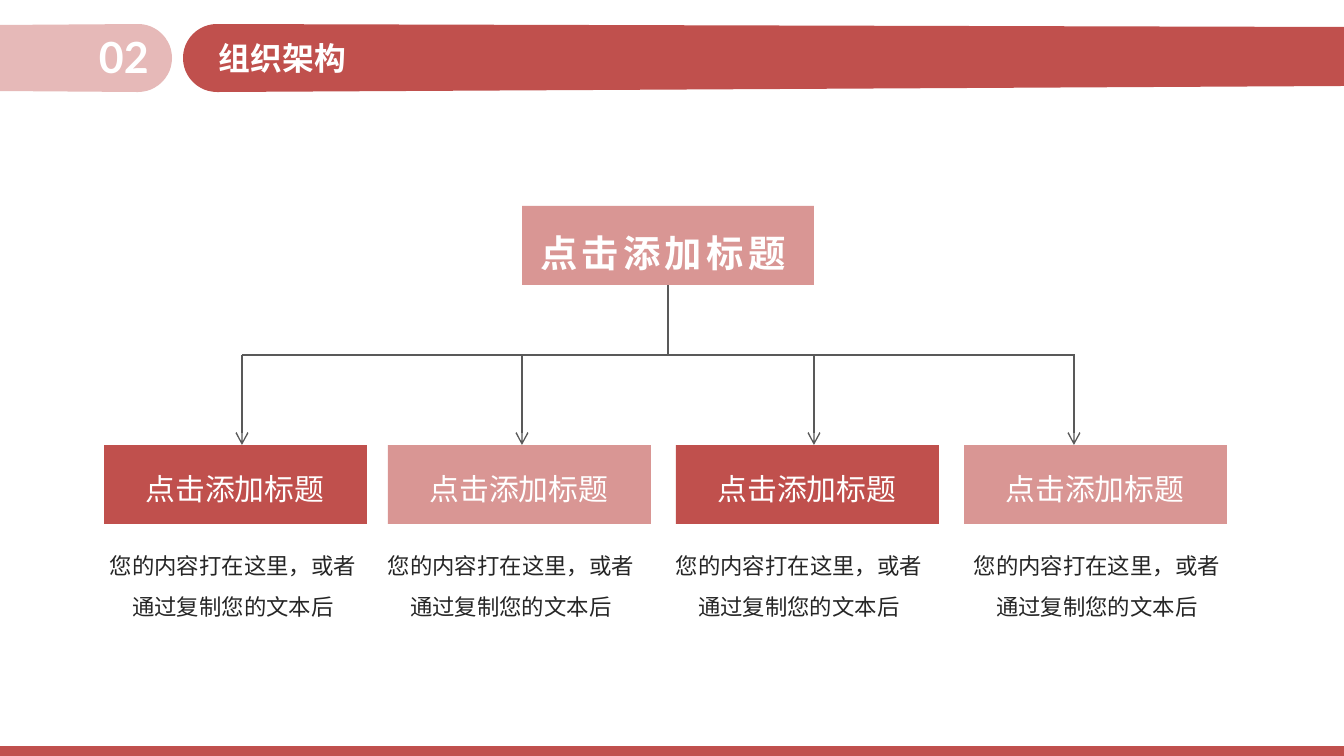
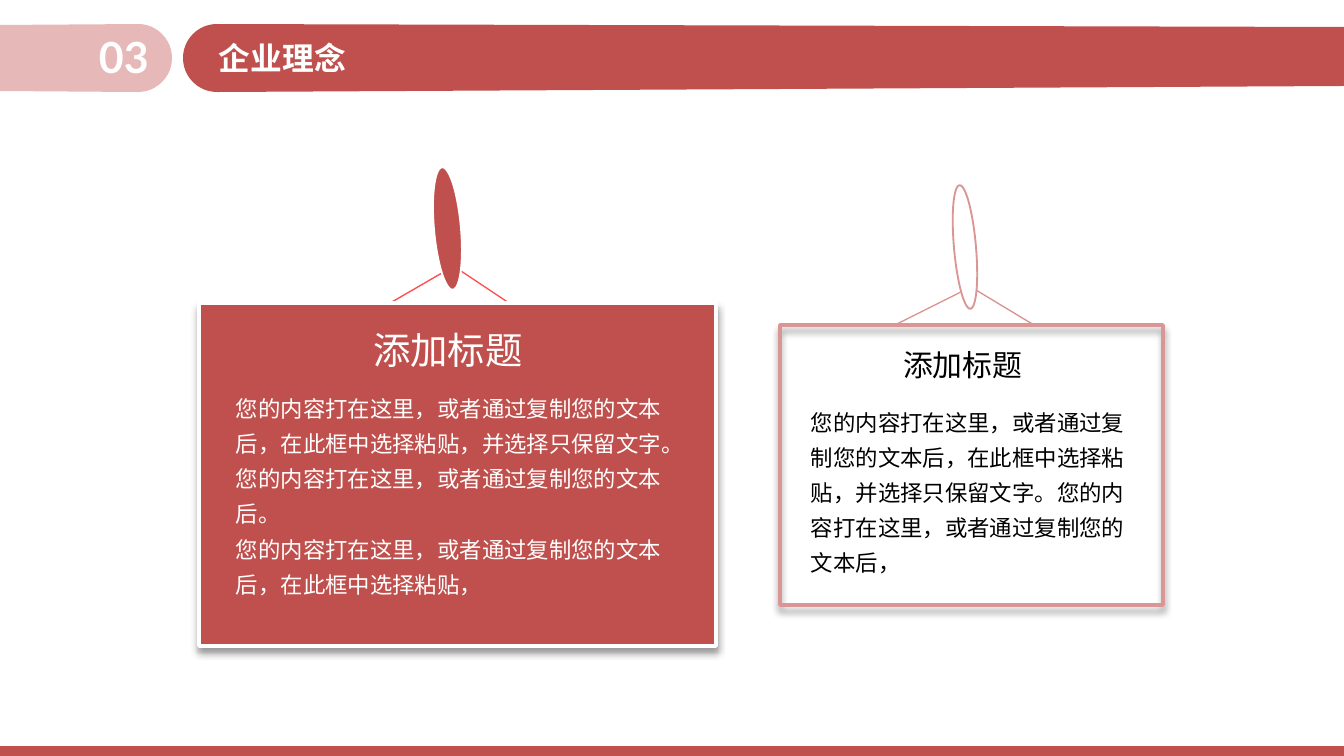
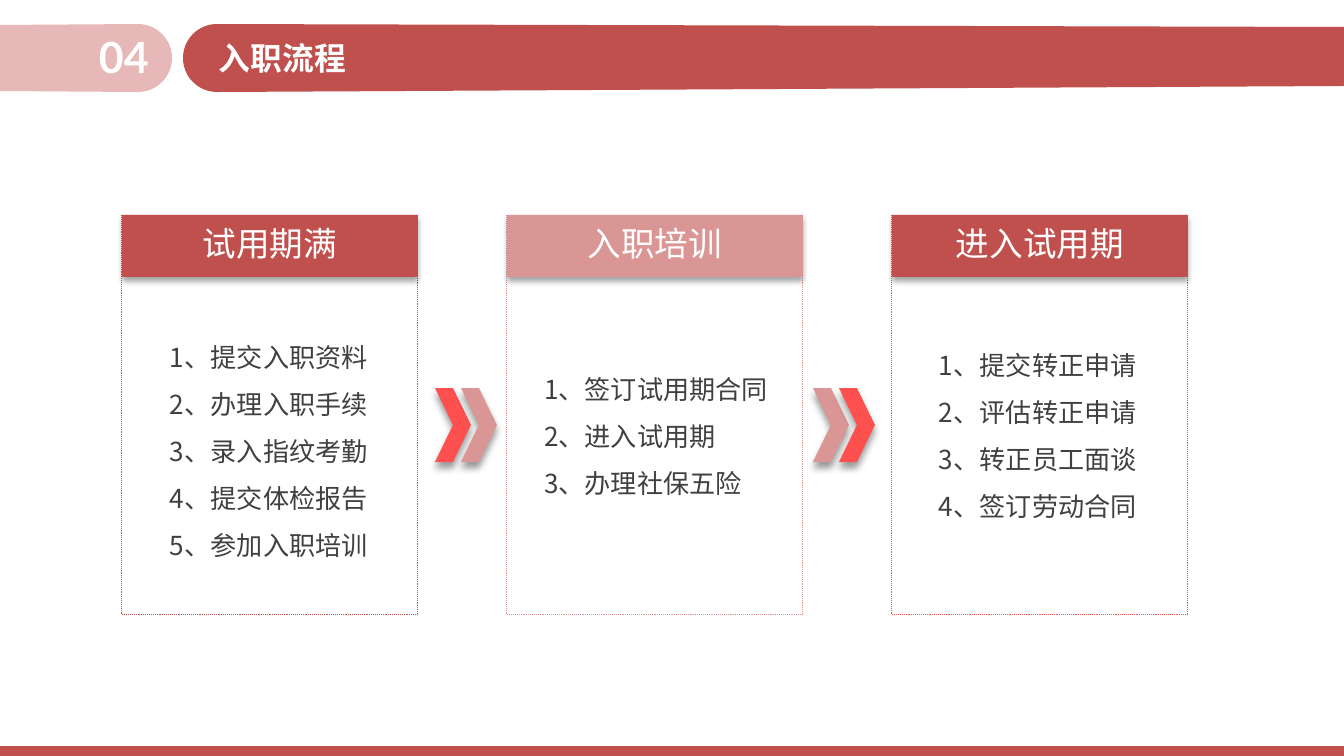
import math
from lxml import etree
from pptx import Presentation
from pptx.dml.color import RGBColor
from pptx.enum import dml, shapes, text
from pptx.oxml.ns import qn
from pptx import util as u

PX = 6804  # EMU per px
RED = RGBColor(0xC0, 0x50, 0x4D)
ROSE = RGBColor(0xD9, 0x96, 0x94)
PALE = RGBColor(0xE6, 0xB9, 0xB8)
HOT = RGBColor(0xFF, 0x50, 0x50)
GREY = RGBColor(0x59, 0x59, 0x59)
INK = RGBColor(0x26, 0x26, 0x26)
SLATE = RGBColor(0x40, 0x40, 0x40)
BLACK = RGBColor(0, 0, 0)
WHITE = RGBColor(0xFF, 0xFF, 0xFF)
SANS = "Noto Sans CJK SC"
LEFT, MID = text.PP_ALIGN.LEFT, text.PP_ALIGN.CENTER
TOP, CENTRE = text.MSO_ANCHOR.TOP, text.MSO_ANCHOR.MIDDLE
KIND = shapes.MSO_SHAPE
SOFT = (35, 3.1, 1.8)
DEEP = (40, 4, 3)


def draw(slide, kind, box, fill=None, line=None, width=1, shade=None):
    """Add a preset shape; shade is (opacity %, blur pt, distance pt)."""
    shape = slide.shapes.add_shape(kind, *[v * PX for v in box])
    shape.shadow.inherit = False
    if fill is None:
        shape.fill.background()
    else:
        shape.fill.solid()
        shape.fill.fore_color.rgb = fill
    if line is None:
        shape.line.fill.background()
    else:
        shape.line.color.rgb = line
        shape.line.width = u.Pt(width)
    if shade:
        alpha, blur, dist = shade
        cast = etree.SubElement(
            shape.element.spPr.find(qn("a:effectLst")), qn("a:outerShdw"),
            blurRad=str(u.Pt(blur)), dist=str(u.Pt(dist)), dir="5400000",
            algn="t", rotWithShape="0")
        tint = etree.SubElement(cast, qn("a:srgbClr"), val="000000")
        etree.SubElement(tint, qn("a:alpha"), val=str(alpha * 1000))
    return shape


def write(shape, lines, size, color, box=None, font=SANS, bold=False, align=LEFT,
          space=1.0, wrap=True, pad=(13, 7), anchor=TOP, track=0):
    """Fill a shape, placeholder or text box (moved to box) with paragraphs."""
    if box:
        shape.left, shape.top, shape.width, shape.height = [v * PX for v in box]
    frame = shape.text_frame
    frame.word_wrap = wrap
    frame.auto_size = text.MSO_AUTO_SIZE.NONE
    frame.vertical_anchor = anchor
    frame.margin_left = frame.margin_right = pad[0] * PX
    frame.margin_top = frame.margin_bottom = pad[1] * PX
    for i, line in enumerate(lines):
        para = frame.add_paragraph() if i else frame.paragraphs[0]
        if shape.is_placeholder:
            props = para._p.get_or_add_pPr()
            props.set("marL", "0")
            props.set("indent", "0")
            etree.SubElement(props, qn("a:buNone"))
        para.alignment = align
        para.line_spacing = space
        para.space_before = u.Pt(0)
        run = para.add_run()
        run.text = line
        run.font.size = u.Pt(size)
        run.font.bold = bold
        run.font.name = font
        run.font.color.rgb = color
        props = run._r.get_or_add_rPr()
        if track:
            props.set("spc", str(track))
        east = etree.Element(qn("a:ea"), typeface=SANS)
        props.find(qn("a:latin")).addnext(east)


deck = Presentation()
deck.slide_width, deck.slide_height = 1344 * PX, 756 * PX

# Slides with number and title
heads = [("02", "组织架构", 5), ("03", "企业理念", 5), ("04", "入职流程", 4)]
for num, name, look in heads:
    slide = deck.slides.add_slide(deck.slide_layouts[look])
    write(slide.shapes.title, [name], 17, WHITE, (206, 32, 156, 53),
          font="Lato", bold=True, wrap=False)
    write(slide.shapes.add_textbox(0, 0, 0, 0), [num], 23, WHITE,
          (86, 24, 78, 66), font="Lato", bold=True, wrap=False)
chart, creed, flow = deck.slides

# Bands, kept on the master
bands = [draw(chart, KIND.RECTANGLE, (0, 746, 1347, 12), RED)]
for mid, turn, ends, fill in [
        (138, -90, [(0, 91), (0, 25)], PALE),
        (217, 90, [(1344, 27), (1344, 86)], RED)]:
    arc = [math.radians(turn + 7.5 * i) for i in range(25)]
    pts = [(mid + 34 * math.cos(a), 58 + 34 * math.sin(a)) for a in arc] + ends
    pts = [(x * PX, y * PX) for x, y in pts]
    path = chart.shapes.build_freeform(*pts[0])
    path.add_line_segments(pts[1:], close=True)
    band = path.convert_to_shape()
    band.shadow.inherit = False
    band.fill.solid()
    band.fill.fore_color.rgb = fill
    band.line.fill.background()
    bands.append(band)
for band in bands:
    deck.slide_master.shapes.element.append(band.element)

# Ropes of the signs and lines of the tree, the trunk last
wires = [(creed, (366, 317, 442, 273), HOT, False),
         (creed, (461, 271, 530, 317), HOT, False),
         (creed, (895, 325, 961, 292), ROSE, False),
         (creed, (976, 290, 1034, 325), ROSE, False),
         (chart, (242, 355, 1075, 355), GREY, False)]
wires += [(chart, (x, 355, x, 445), GREY, True) for x in (242, 522, 814, 1074)]
wires.append((chart, (668, 285, 668, 355), GREY, False))
for slide, ends, color, arrow in wires:
    wire = slide.shapes.add_connector(
        shapes.MSO_CONNECTOR.STRAIGHT, *[v * PX for v in ends])
    wire.line.color.rgb = color
    wire.line.width = u.Pt(0.75)
    props = wire.element.spPr
    if arrow:
        etree.SubElement(props.find(qn("a:ln")), qn("a:tailEnd"), type="arrow")
    etree.SubElement(props, qn("a:effectLst"))

# Slide 1: tree
root = draw(chart, KIND.RECTANGLE, (522, 206, 292, 79), ROSE)
wire.begin_connect(root, 2)
write(chart.shapes.add_textbox(0, 0, 0, 0), ["点击添加标题"], 20, WHITE,
      (524, 223, 278, 59), bold=True, align=MID, wrap=False, track=220)
for x, note, fill in [(104, 94, RED), (388, 372, ROSE),
                      (676, 660, RED), (964, 958, ROSE)]:
    draw(chart, KIND.RECTANGLE, (x, 445, 263, 79), fill)
    write(chart.shapes.add_textbox(0, 0, 0, 0), ["点击添加标题"], 16, WHITE,
          (x + 27, 464, 208, 50), align=MID, wrap=False)
    write(chart.shapes.add_textbox(0, 0, 0, 0),
          ["您的内容打在这里，或者通过复制您的文本后"], 12, INK,
          (note, 532, 278, 95), align=MID, space=1.5)

# Slide 2: hanging signs
base = "您的内容打在这里，或者通过复制您的文本后，在此框中选择粘贴，"
long = base + "并选择只保留文字。您的内容打在这里，或者通过复制您的文本后"
signs = [
    ((434, 167, 27, 123), (199, 303, 517, 343), RED, WHITE, WHITE,
     20, (360, 320, 177, 59),
     [(long + "。", (227, 382, 458, 152)), (base, (227, 523, 458, 81))]),
    ((954, 185, 22, 124), (780, 325, 383, 280), None, ROSE, BLACK,
     16, (890, 340, 148, 50), [(long + "，", (802, 396, 339, 187))])]
for peg, card, fill, edge, ink, size, spot, notes in signs:
    draw(creed, KIND.OVAL, peg, fill, edge).rotation = -5
    draw(creed, KIND.RECTANGLE, card, fill, edge, 2, DEEP)
    write(creed.shapes.add_textbox(0, 0, 0, 0), ["添加标题"], size, ink, spot,
          wrap=False)
    for note, box in notes:
        write(creed.shapes.add_textbox(0, 0, 0, 0), [note], 12, ink, box,
              space=1.3, pad=(9, 5))

# Slide 3: steps
steps = [
    ("试用期满", RED, RED, (157, 319, 241, 251),
     ["提交入职资料", "办理入职手续", "录入指纹考勤", "提交体检报告", "参加入职培训"]),
    ("入职培训", ROSE, ROSE, (531, 351, 296, 156),
     ["签订试用期合同", "进入试用期", "办理社保五险"]),
    ("进入试用期", RED, HOT, (926, 327, 289, 203),
     ["提交转正申请", "评估转正申请", "转正员工面谈", "签订劳动合同"])]
*lists, spare = list(flow.placeholders)[1:]
spare.element.getparent().remove(spare.element)
for i, (name, fill, edge, box, items) in enumerate(steps):
    x = 122 + 385 * i
    frame = draw(flow, KIND.RECTANGLE, (x, 215, 296, 400), None, edge, 0.5)
    frame.line.dash_style = dml.MSO_LINE.ROUND_DOT
    head = draw(flow, KIND.RECTANGLE, (x, 215, 296, 62), fill, shade=SOFT)
    write(head, [name], 18, WHITE, align=MID, space=0.9, pad=(16, 16),
          anchor=CENTRE)
    write(lists[i], [f"{n}、{item}" for n, item in enumerate(items, 1)],
          14, SLATE, box, space=1.5)
for x, fill in [(435, HOT), (461, ROSE), (813, ROSE), (839, HOT)]:
    draw(flow, KIND.CHEVRON, (x, 388, 36, 74), fill, shade=DEEP)

deck.save("out.pptx")
